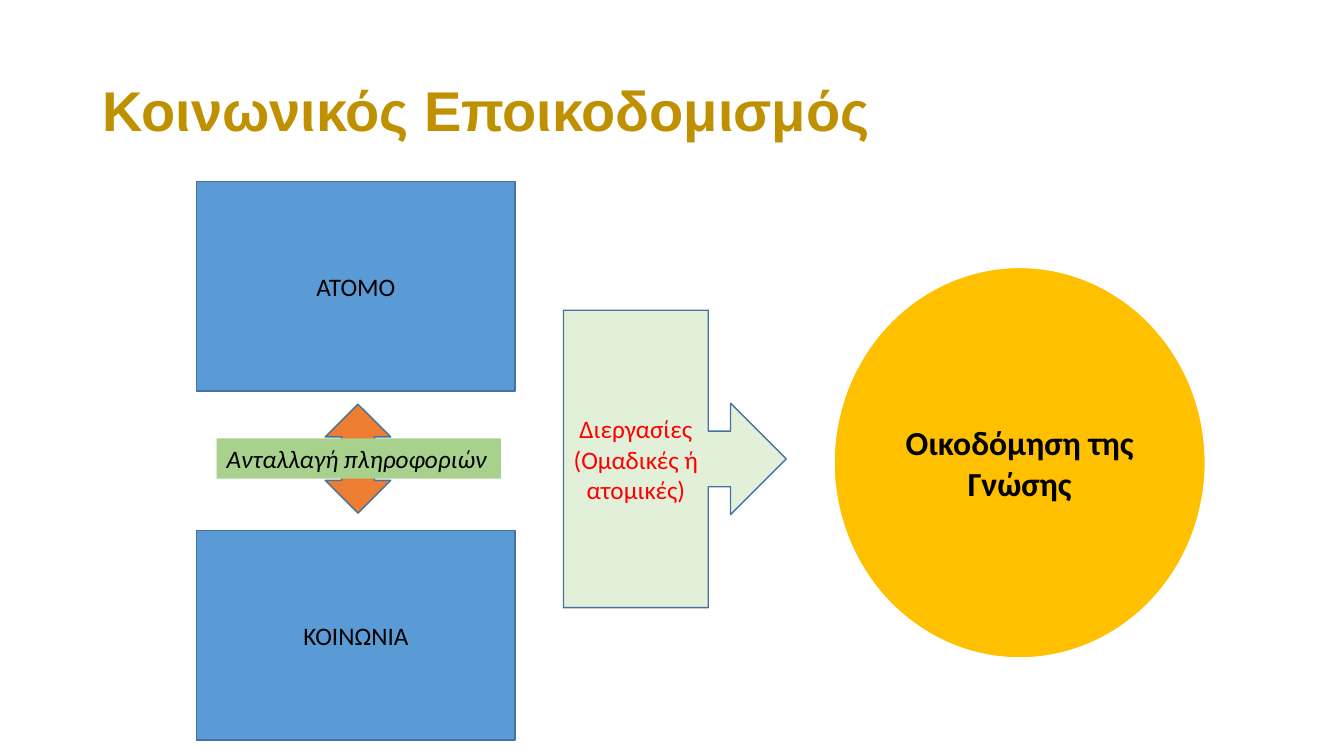
import pptx
import pptx.util
import pptx.dml.color
import pptx.enum.shapes
import pptx.enum.text

Pt = pptx.util.Pt
Kind = pptx.enum.shapes.MSO_SHAPE
Align = pptx.enum.text.PP_ALIGN
Anchor = pptx.enum.text.MSO_ANCHOR


def paint(target, color):
    target.rgb = pptx.dml.color.RGBColor.from_string(color)


def write(shape, text, size=18, font="Calibri", color="000000", bold=False,
          italic=False, align=Align.CENTER, anchor=Anchor.MIDDLE,
          wrap=True, space=1.0):
    """Fill the shape with text, one paragraph a line."""
    frame = shape.text_frame
    frame.word_wrap = wrap
    frame.vertical_anchor = anchor
    frame.text = text
    for para in frame.paragraphs:
        para.alignment = align
        para.line_spacing = space
        style = para.runs[0].font
        style.size, style.name = Pt(size), font
        style.bold, style.italic = bold, italic
        paint(style.color, color)


deck = pptx.Presentation()
deck.slide_width, deck.slide_height = Pt(960), Pt(540)
slide = deck.slides.add_slide(deck.slide_layouts[6])

# Kind, left, top, width, height, fill, line, line width, text, format
blue, edge = "5B9BD5", "43739E"
parts = [
    (Kind.RECTANGLE, 140.5, 378.8, 227.5, 149.8, blue, edge, 1,
     "ΚΟΙΝΩΝΙΑ", {}),
    (Kind.RECTANGLE, 140.5, 129.6, 227.5, 149.8, blue, edge, 1,
     "ΑΤΟΜΟ", {}),
    (Kind.UP_DOWN_ARROW, 232.3, 288.7, 46.8, 77.8, "ED7D31", edge, 1,
     "", {}),
    (Kind.RECTANGLE, 154.8, 313.2, 203, 28.8, "A9D18E", None, 0,
     "Ανταλλαγή πληροφοριών",
     dict(italic=True, align=Align.LEFT, anchor=Anchor.TOP, wrap=False)),
    (Kind.RIGHT_ARROW_CALLOUT, 402.5, 221.6, 159.1, 212.4, "E2F0D9", edge, 1,
     "Διεργασίες\n(Ομαδικές ή ατομικές)", dict(color="FF0000")),
    (Kind.OVAL, 595.5, 190.8, 265.7, 279.4, "FFC000", "FFFFFF", 1.5,
     "Οικοδόμηση της Γνώσης", dict(size=24, bold=True)),
]
for kind, left, top, width, height, fill, line, weight, text, form in parts:
    shape = slide.shapes.add_shape(
        kind, Pt(left), Pt(top), Pt(width), Pt(height))
    shape.shadow.inherit = False
    shape.fill.solid()
    paint(shape.fill.fore_color, fill)
    if line:
        paint(shape.line.color, line)
        shape.line.width = Pt(weight)
    else:
        shape.line.fill.background()
    if text:
        write(shape, text, **form)

title = slide.shapes.add_textbox(Pt(66), Pt(28.8), Pt(828), Pt(104.4))
write(title, "Κοινωνικός Εποικοδομισμός", size=40, font="Arial",
      color="BF9000", bold=True, align=Align.LEFT, space=0.9)

deck.save("out.pptx")
